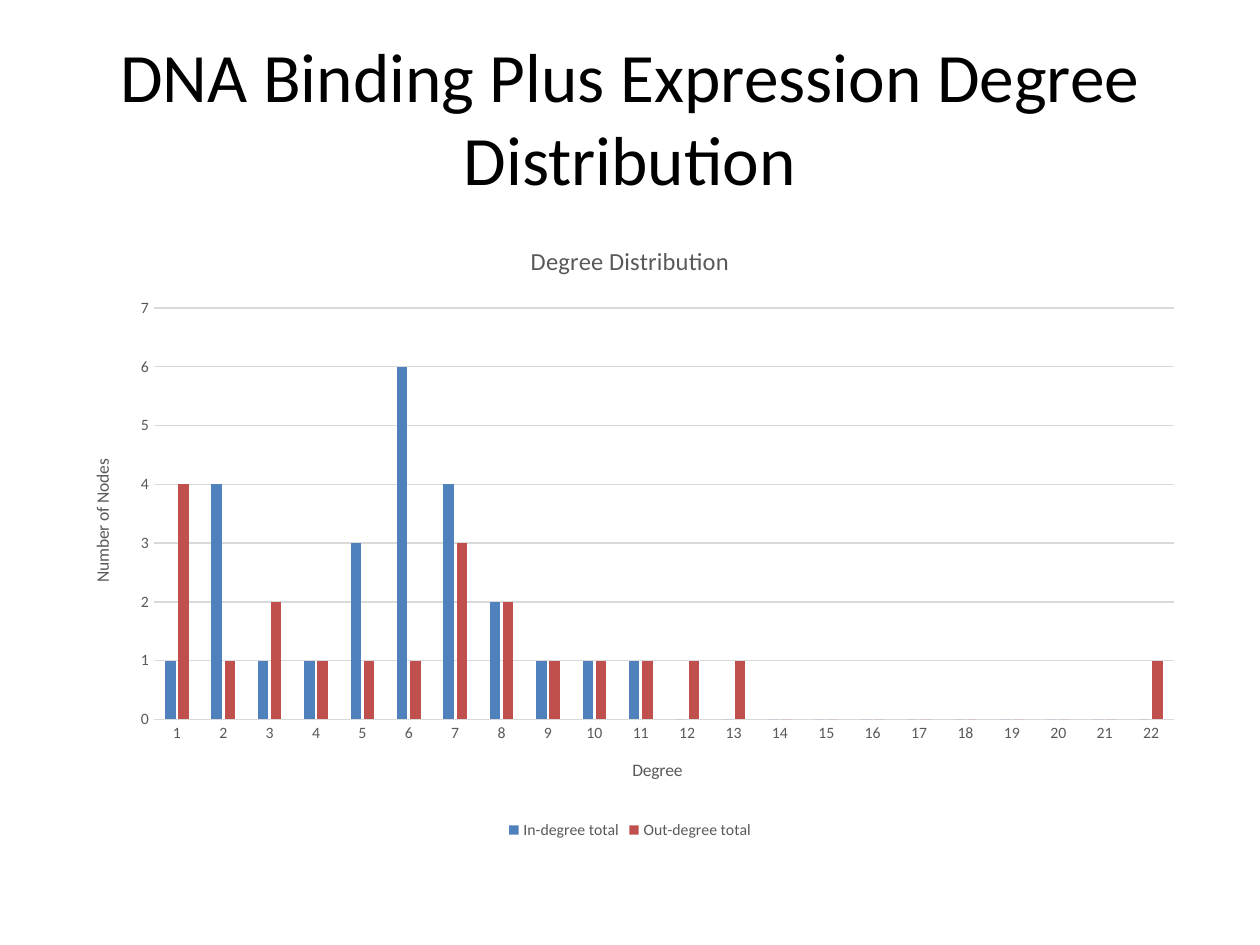
from lxml import etree
from pptx import Presentation
from pptx.chart.data import CategoryChartData
from pptx.dml.color import RGBColor
from pptx.enum.chart import XL_CHART_TYPE, XL_LEGEND_POSITION, XL_TICK_MARK
from pptx.enum.text import MSO_ANCHOR, PP_ALIGN
from pptx.oxml.ns import qn
from pptx.util import Cm, Pt

CLUSTERED = XL_CHART_TYPE.COLUMN_CLUSTERED
BOTTOM = XL_LEGEND_POSITION.BOTTOM
NO_TICK = XL_TICK_MARK.NONE
MIDDLE = MSO_ANCHOR.MIDDLE
CENTER = PP_ALIGN.CENTER

HEADING = "DNA Binding Plus Expression Degree Distribution"
CHART_TITLE = "Degree Distribution"
DEGREE_TITLE = "Degree"
NODES_TITLE = "Number of Nodes"
DEGREES = [str(degree) for degree in range(1, 23)]
SERIES = [
    ("In-degree total", "4F81BD",
     [1, 4, 1, 1, 3, 6, 4, 2, 1, 1, 1] + [0] * 11),
    ("Out-degree total", "C0504D",
     [4, 1, 2, 1, 1, 1, 3, 2, 1, 1, 1, 1, 1] + [0] * 8 + [1]),
]
# Inner plot area, as fractions of the chart
PLOT_AREA = {"x": 0.08, "y": 0.14, "w": 0.9, "h": 0.66}

FONT = "Calibri"
BLACK, GREY, PALE = "000000", "595959", "D9D9D9"


def rgb(hex_color):
    return RGBColor.from_string(hex_color)


def style(font, size, color):
    font.name = FONT
    font.size = Pt(size)
    font.bold = False
    font.color.rgb = rgb(color)


def set_title(owner, text, size):
    """Title a chart or an axis."""
    owner.has_title = True
    frame = (owner.chart_title if hasattr(owner, "chart_title")
             else owner.axis_title).text_frame
    frame.text = text
    style(frame.paragraphs[0].font, size, GREY)


def draw_line(line):
    line.color.rgb = rgb(PALE)
    line.width = Pt(0.75)


def place_plot(chart):
    plot_area = chart.plots[0]._element.getparent()
    for old in plot_area.findall(qn("c:layout")):
        plot_area.remove(old)
    layout = etree.Element(qn("c:layout"))
    manual = etree.SubElement(layout, qn("c:manualLayout"))
    settings = {"layoutTarget": "inner", "xMode": "edge", "yMode": "edge", **PLOT_AREA}
    for tag, value in settings.items():
        etree.SubElement(manual, qn("c:" + tag)).set("val", str(value))
    plot_area.insert(0, layout)


def add_heading(slide):
    frame = slide.shapes.add_textbox(Cm(1.27), Cm(0.76), Cm(22.86), Cm(3.18)).text_frame
    frame.word_wrap = True
    frame.vertical_anchor = MIDDLE
    paragraph = frame.paragraphs[0]
    paragraph.text = HEADING
    paragraph.alignment = CENTER
    style(paragraph.font, 39.6, BLACK)


def add_degree_chart(slide):
    data = CategoryChartData()
    data.categories = DEGREES
    for name, _, counts in SERIES:
        data.add_series(name, counts)
    chart = slide.shapes.add_chart(
        CLUSTERED, Cm(1.27), Cm(4.45), Cm(22.86), Cm(12.57), data).chart
    style(chart.font, 10, BLACK)
    set_title(chart, CHART_TITLE, 14)

    plot = chart.plots[0]
    plot.gap_width = 219
    plot.overlap = -27
    plot.vary_by_categories = False
    for bars, (_, color, _) in zip(plot.series, SERIES):
        bars.format.fill.solid()
        bars.format.fill.fore_color.rgb = rgb(color)

    degree_axis, nodes_axis = chart.category_axis, chart.value_axis
    for axis, title in ((degree_axis, DEGREE_TITLE), (nodes_axis, NODES_TITLE)):
        set_title(axis, title, 10)
        style(axis.tick_labels.font, 9, GREY)
        axis.major_tick_mark = axis.minor_tick_mark = NO_TICK
    draw_line(degree_axis.format.line)
    nodes_axis.format.line.fill.background()
    nodes_axis.minimum_scale, nodes_axis.maximum_scale = 0, 7
    nodes_axis.major_unit = 1
    draw_line(nodes_axis.major_gridlines.format.line)

    chart.has_legend = True
    chart.legend.position = BOTTOM
    chart.legend.include_in_layout = False
    style(chart.legend.font, 9, GREY)
    place_plot(chart)


def main():
    deck = Presentation()
    deck.slide_width, deck.slide_height = Cm(25.4), Cm(19.05)
    slide = deck.slides.add_slide(deck.slide_layouts[6])
    add_heading(slide)
    add_degree_chart(slide)
    deck.save("out.pptx")


if __name__ == "__main__":
    main()
